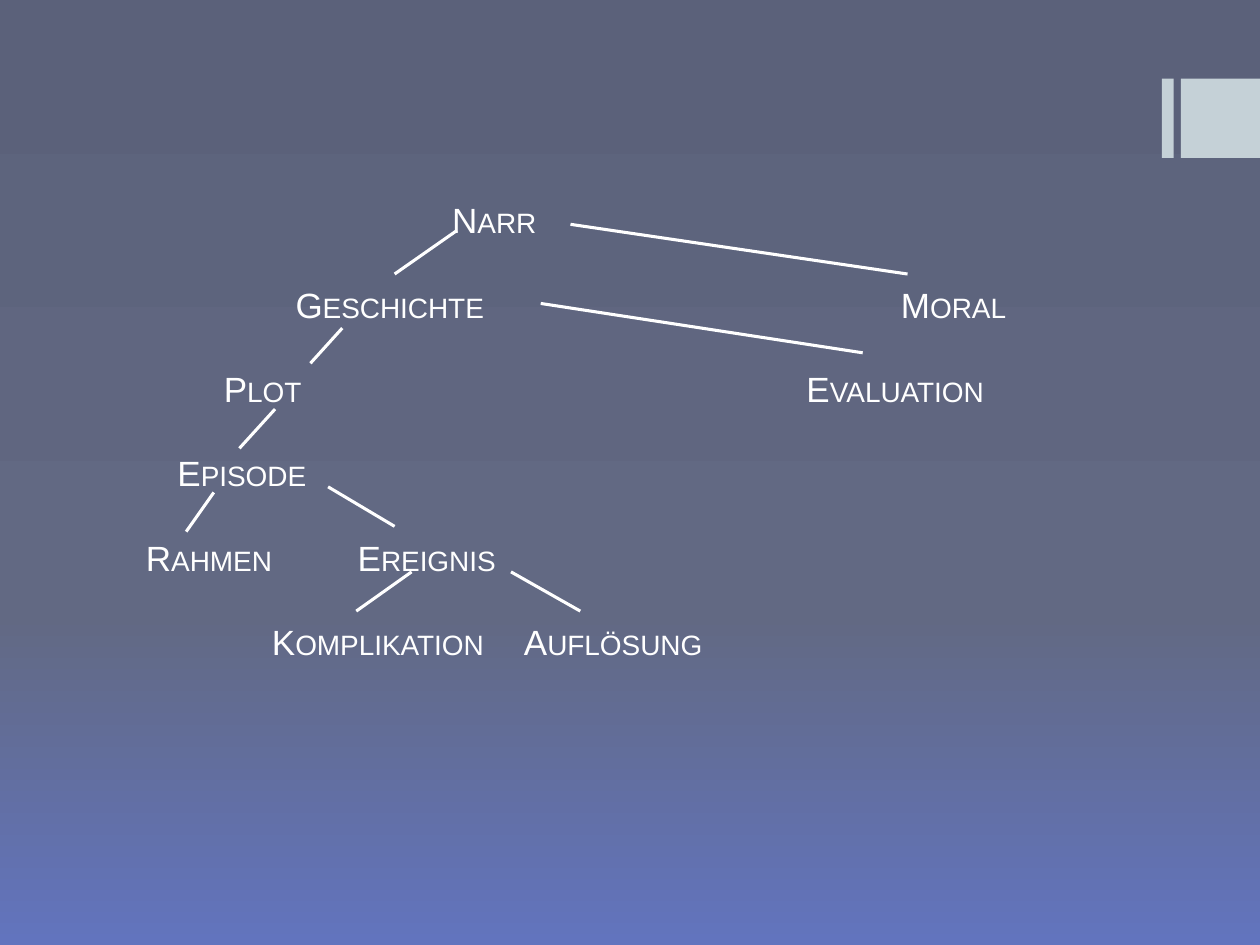
"""Build a slide with the story tree of a narrative in small caps."""
from copy import deepcopy
from dataclasses import dataclass

from lxml import etree
from pptx import Presentation
from pptx import util as u
from pptx.dml.color import RGBColor
from pptx.enum import shapes, text
from pptx.oxml import ns

WHITE = RGBColor(0xFF, 0xFF, 0xFF)
MIST = RGBColor(0xC5, 0xD1, 0xD7)
SLATE = RGBColor(0x5B, 0x61, 0x7A)
STEEL = RGBColor(0x62, 0x69, 0x83)
BLUE = RGBColor(0x62, 0x74, 0xBE)

STOPS = [(0, SLATE), (0.65, STEEL), (1, BLUE)]
PITCH = 24.1
FONT = {"name": "Arial", "size": u.Pt(20)}
FRAME = {
    "word_wrap": True,
    "auto_size": text.MSO_AUTO_SIZE.SHAPE_TO_FIT_TEXT,
    "vertical_anchor": text.MSO_ANCHOR.TOP,
}


@dataclass
class Label:
    word: str
    left: float


@dataclass
class Branch:
    x1: float
    y1: float
    x2: float
    y2: float


@dataclass
class Bar:
    left: float
    width: float


BARS = [Bar(664, 6.75), Bar(674.75, 45.25)]

ROWS = [
    [Label("Narr", 175)],
    [Label("Geschichte", 85.5), Label("Moral", 431.5)],
    [Label("Plot", 44.5), Label("Evaluation", 377.5)],
    [Label("Episode", 18)],
    [Label("Rahmen", 0), Label("Ereignis", 121)],
    [Label("Komplikation", 72), Label("Auflösung", 216)],
]

TREE = [
    Branch(326, 128.2, 518.6, 156.6),
    Branch(309, 173.4, 493, 201.6),
    Branch(225.5, 156.6, 261, 131.8),
    Branch(177.4, 207.6, 195.6, 187.5),
    Branch(136.8, 256.2, 157.2, 233.8),
    Branch(106.4, 303.8, 122.2, 281.4),
    Branch(203.6, 349.2, 235.2, 326.8),
    Branch(187.5, 278.2, 225.5, 300.8),
    Branch(292, 326.8, 331.6, 349.2),
]


def apply(item: object, values: dict) -> None:
    for key, value in values.items():
        setattr(item, key, value)


def paint(slide) -> None:
    fill = slide.background.fill
    fill.gradient()
    fill.gradient_angle = 270
    marks = slide.element.find(".//" + ns.qn("a:gsLst"))
    marks.insert(1, deepcopy(marks[0]))
    for stop, (place, shade) in zip(fill.gradient_stops, STOPS):
        stop.position = place
        stop.color.rgb = shade


def draw_bar(slide, bar: Bar) -> None:
    box = slide.shapes.add_shape(
        shapes.MSO_SHAPE.RECTANGLE,
        u.Pt(bar.left), u.Pt(45), u.Pt(bar.width), u.Pt(45.25))
    box.shadow.inherit = False
    box.fill.solid()
    box.fill.fore_color.rgb = MIST
    box.line.fill.background()


def write_row(para, row: list[Label], gap: float) -> None:
    apply(para, {"line_spacing": u.Pt(PITCH), "space_before": u.Pt(gap),
                 "alignment": text.PP_ALIGN.LEFT})
    tabs = etree.SubElement(para._p.get_or_add_pPr(), ns.qn("a:tabLst"))
    run = para.add_run()
    run.text = "".join("\t" * (lab.left > 0) + lab.word for lab in row)
    for lab in row:
        if lab.left:
            etree.SubElement(tabs, ns.qn("a:tab"),
                             pos=str(u.Pt(lab.left)), algn="l")
    apply(run.font, FONT)
    run.font.color.rgb = WHITE
    run.font._element.set("cap", "small")


def write_rows(group, rows: list[list[Label]]) -> None:
    box = group.shapes.add_textbox(
        u.Pt(76.3), u.Pt(110), u.Pt(566.7), u.Pt(273.6))
    frame = box.text_frame
    apply(frame, FRAME)
    for num, row in enumerate(rows):
        para = frame.add_paragraph() if num else frame.paragraphs[0]
        write_row(para, row, PITCH if num else 0)


def draw_branch(group, arm: Branch) -> None:
    line = group.shapes.add_connector(
        shapes.MSO_CONNECTOR.STRAIGHT,
        u.Pt(arm.x1), u.Pt(arm.y1), u.Pt(arm.x2), u.Pt(arm.y2))
    line.line.width = u.Pt(1.75)
    line.line.color.rgb = WHITE
    etree.SubElement(line._element.spPr, ns.qn("a:effectLst"))


def main() -> None:
    deck = Presentation()
    apply(deck, {"slide_width": u.Pt(720), "slide_height": u.Pt(540)})
    slide = deck.slides.add_slide(deck.slide_layouts[6])
    paint(slide)
    for bar in BARS:
        draw_bar(slide, bar)
    group = slide.shapes.add_group_shape()
    write_rows(group, ROWS)
    for arm in TREE:
        draw_branch(group, arm)
    deck.save("out.pptx")


if __name__ == "__main__":
    main()
